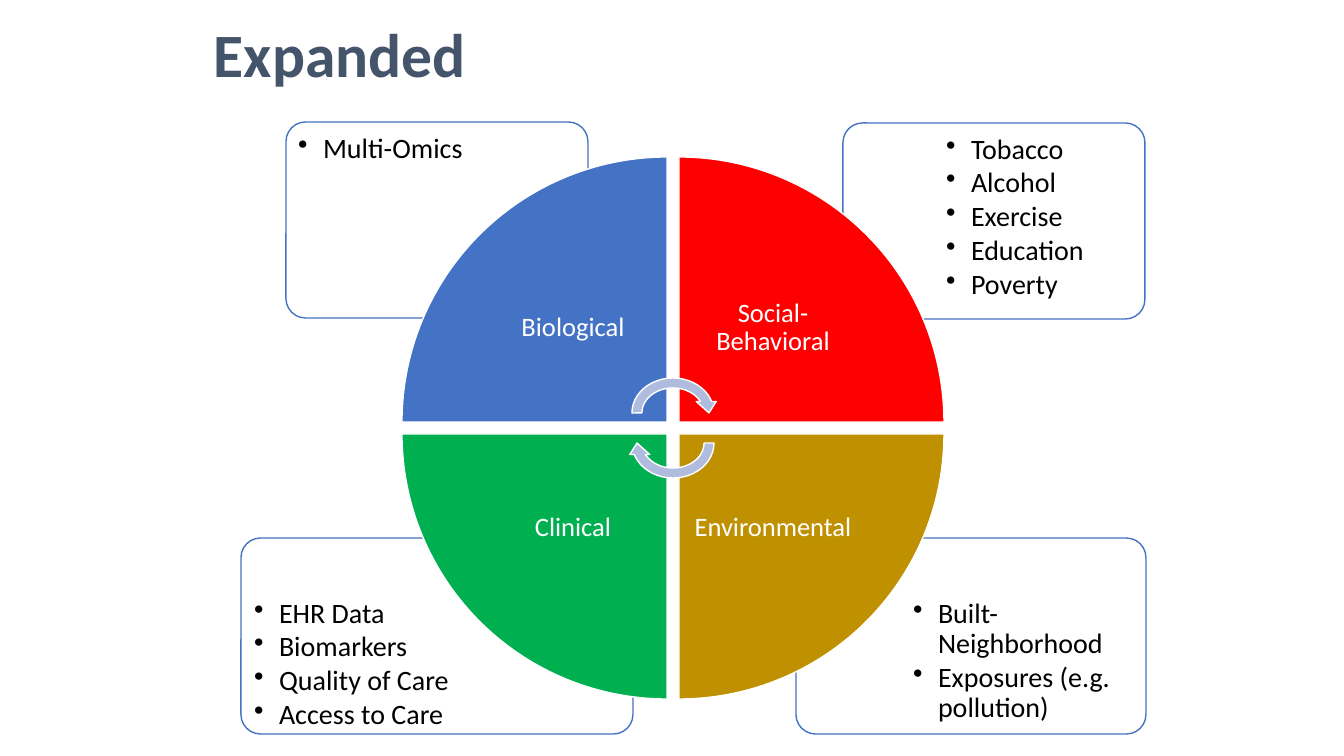
import pptx
import pptx.util
import pptx.dml.color
import pptx.enum.shapes
import pptx.enum.text
import pptx.oxml.ns
import lxml.etree

SHAPE = pptx.enum.shapes.MSO_SHAPE
ANCHOR = pptx.enum.text.MSO_ANCHOR
ALIGN = pptx.enum.text.PP_ALIGN
SCALE = 914400 / 100.8


def px(n):
    return pptx.util.Emu(round(n * SCALE))


def color(code):
    return pptx.dml.color.RGBColor.from_string(code)


def child(node, tag, **attrs):
    return lxml.etree.SubElement(node, pptx.oxml.ns.qn(tag), **attrs)


class Painter:
    font = "Calibri"
    edge = "4472C4"
    white = "FFFFFF"

    def __init__(self, slide):
        self.slide = slide

    def shape(self, kind, box, fill, line, turn=0):
        item = self.slide.shapes.add_shape(kind, *map(px, box))
        item.shadow.inherit = False
        item.fill.solid()
        item.fill.fore_color.rgb = color(fill)
        item.line.color.rgb = color(line)
        item.line.width = pptx.util.Pt(1)
        item.rotation = turn
        return item

    def text(self, box, lines, size, ink, pad, anchor=ANCHOR.TOP, align=ALIGN.LEFT, bold=False):
        frame = self.slide.shapes.add_textbox(*map(px, box)).text_frame
        frame.word_wrap = True
        frame.vertical_anchor = anchor
        frame.margin_left = frame.margin_right = px(pad[0])
        frame.margin_top = frame.margin_bottom = px(pad[1])
        frame.text = "\n".join(lines)
        for para in frame.paragraphs:
            para.alignment = align
            para.line_spacing = 0.9
            para.font.name = self.font
            para.font.size = pptx.util.Pt(size)
            para.font.bold = bold
            para.font.color.rgb = color(ink)
        return frame

    def title(self, box, words):
        self.text(box, [words], 44, "44546A", (10, 5), ANCHOR.MIDDLE, bold=True)

    def card(self, box):
        item = self.shape(SHAPE.ROUNDED_RECTANGLE, box, self.white, self.edge)
        item.adjustments[0] = 0.1
        tint = item.fill._xPr.find(".//" + pptx.oxml.ns.qn("a:srgbClr"))
        child(tint, "a:alpha", val="90000")

    def bullets(self, box, lines):
        frame = self.text(box, lines, 20, "000000", (8, 8))
        for para in frame.paragraphs:
            para.space_after = pptx.util.Pt(2.5)
            props = para._p.get_or_add_pPr()
            props.set("marL", str(px(25)))
            props.set("indent", str(-px(25)))
            mark = lxml.etree.Element(pptx.oxml.ns.qn("a:buChar"), char="•")
            props.insert_element_before(mark, "a:tabLst", "a:defRPr", "a:extLst")

    def wedge(self, col, row, fill, turn, label):
        side, inner = 265, 188
        left, top = 402 + col * 277, 157 + row * 277
        self.shape(SHAPE.PIE_WEDGE, (left, top, side, side), fill, self.white, turn)
        gap = side - inner
        box = (left + gap * (1 - col), top + gap * (1 - row), inner, inner)
        self.text(box, [label], 19, self.white, (15, 15), ANCHOR.MIDDLE, ALIGN.CENTER)

    def arrow(self, top, turn):
        self.shape(SHAPE.CIRCULAR_ARROW, (627, top, 92, 80), "B0BCDE", self.white, turn)


CARDS = [
    ((796, 538, 350, 196), (905, 591, 236, 138),
     ["Built-Neighborhood", "Exposures (e.g. pollution)"]),
    ((241, 538, 392, 196), (246, 591, 266, 138),
     ["EHR Data", "Biomarkers", "Quality of Care", "Access to Care"]),
    ((843, 123, 302, 196), (938, 127, 203, 138),
     ["Tobacco", "Alcohol", "Exercise", "Education", "Poverty"]),
    ((286, 122, 302, 196), (290, 126, 203, 138), ["Multi-Omics"]),
]
WEDGES = [
    (0, 0, "4472C4", 0, "Biological"),
    (1, 0, "FF0000", 90, "Social-Behavioral"),
    (1, 1, "BF9000", 180, "Environmental"),
    (0, 1, "00B050", 270, "Clinical"),
]


def main():
    deck = pptx.Presentation()
    deck.slide_width, deck.slide_height = px(1344), px(756)
    pen = Painter(deck.slides.add_slide(deck.slide_layouts[6]))
    pen.title((204, 14, 903, 88), "Expanded")
    for frame, box, lines in CARDS:
        pen.card(frame)
        pen.bullets(box, lines)
    for wedge in WEDGES:
        pen.wedge(*wedge)
    pen.arrow(373, 0)
    pen.arrow(403, 180)
    deck.save("out.pptx")


if __name__ == "__main__":
    main()
